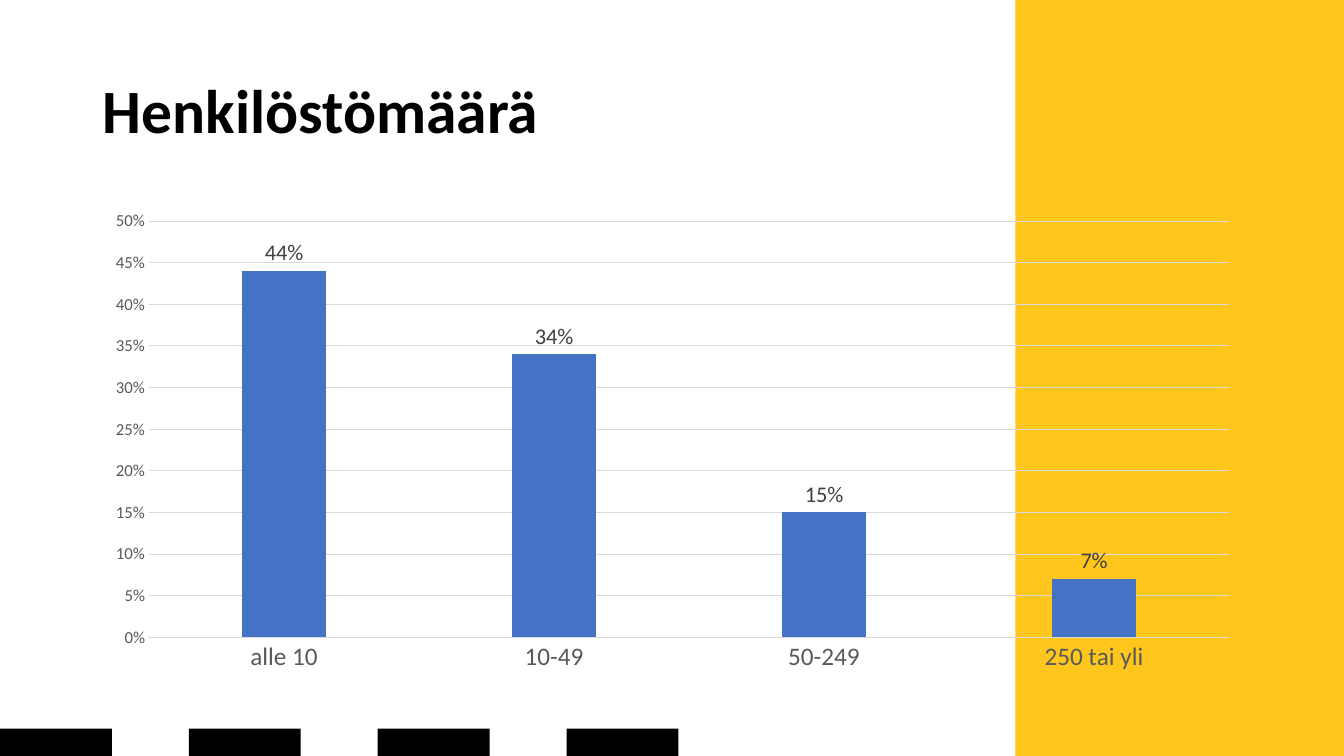
from dataclasses import dataclass

import pptx
import pptx.chart.data
import pptx.dml.color
import pptx.enum.chart
import pptx.enum.shapes
import pptx.enum.text
import pptx.util
from pptx.util import Inches


@dataclass(frozen=True)
class Theme:
    font: str = "Calibri"
    yellow: str = "FFC61E"
    black: str = "000000"
    bar: str = "4472C4"
    grid: str = "D9D9D9"
    axis_text: str = "595959"
    label_text: str = "404040"
    title_size: int = 44
    category_size: int = 18
    label_size: int = 16
    value_size: int = 12
    chart_size: int = 10


THEME = Theme()
HEADCOUNT_SHARES = {
    "alle 10": 0.44,
    "10-49": 0.34,
    "50-249": 0.15,
    "250 tai yli": 0.07,
}


def rgb(color):
    return pptx.dml.color.RGBColor.from_string(color)


def style_font(font, size, color, bold=False):
    font.name = THEME.font
    font.size = pptx.util.Pt(size)
    font.color.rgb = rgb(color)
    font.bold = bold


def style_line(line, color):
    line.color.rgb = rgb(color)
    line.width = pptx.util.Pt(0.75)


def add_block(page, left, top, width, height, color):
    block = page.shapes.add_shape(
        pptx.enum.shapes.MSO_SHAPE.RECTANGLE,
        Inches(left), Inches(top), Inches(width), Inches(height))
    block.shadow.inherit = False
    block.fill.solid()
    block.fill.fore_color.rgb = rgb(color)
    block.line.fill.background()


def add_title(page, text):
    box = page.shapes.add_textbox(
        Inches(0.92), Inches(0.4), Inches(11.5), Inches(1.45))
    frame = box.text_frame
    frame.word_wrap = True
    frame.vertical_anchor = pptx.enum.text.MSO_ANCHOR.MIDDLE
    para = frame.paragraphs[0]
    para.text = text
    para.line_spacing = 0.9
    style_font(para.font, THEME.title_size, THEME.black, bold=True)


def style_axes(chart):
    no_tick = pptx.enum.chart.XL_TICK_MARK.NONE
    for axis, size in ((chart.category_axis, THEME.category_size),
                       (chart.value_axis, THEME.value_size)):
        axis.major_tick_mark = no_tick
        axis.minor_tick_mark = no_tick
        style_font(axis.tick_labels.font, size, THEME.axis_text)
    style_line(chart.category_axis.format.line, THEME.grid)

    values = chart.value_axis
    values.minimum_scale = 0
    values.maximum_scale = 0.5
    values.major_unit = 0.05
    values.tick_labels.number_format = "0%"
    values.tick_labels.number_format_is_linked = False
    values.format.line.fill.background()
    style_line(values.major_gridlines.format.line, THEME.grid)


def style_bars(plot):
    plot.gap_width = 219
    plot.overlap = -27
    plot.vary_by_categories = False
    series = plot.series[0]
    series.format.fill.solid()
    series.format.fill.fore_color.rgb = rgb(THEME.bar)

    labels = series.data_labels
    labels.show_value = True
    labels.number_format = "0%"
    labels.number_format_is_linked = False
    labels.position = pptx.enum.chart.XL_LABEL_POSITION.OUTSIDE_END
    style_font(labels.font, THEME.label_size, THEME.label_text)


def add_column_chart(page, shares):
    chart_data = pptx.chart.data.CategoryChartData(number_format="0%")
    chart_data.categories = list(shares)
    chart_data.add_series("Series 1", list(shares.values()))
    chart = page.shapes.add_chart(
        pptx.enum.chart.XL_CHART_TYPE.COLUMN_CLUSTERED,
        Inches(0.92), Inches(2), Inches(11.5), Inches(4.76),
        chart_data).chart
    chart.has_title = False
    chart.has_legend = False
    style_font(chart.font, THEME.chart_size, THEME.black)
    style_axes(chart)
    style_bars(chart.plots[0])


def main():
    deck = pptx.Presentation()
    deck.slide_width = Inches(13.33)
    deck.slide_height = Inches(7.5)
    page = deck.slides.add_slide(deck.slide_layouts[6])

    add_block(page, 10.07, 0, 3.26, 7.5, THEME.yellow)
    for index in range(4):
        add_block(page, index * 1.873, 7.23, 1.11, 0.27, THEME.black)
    add_title(page, "Henkilöstömäärä")
    add_column_chart(page, HEADCOUNT_SHARES)

    deck.save("out.pptx")


if __name__ == "__main__":
    main()
